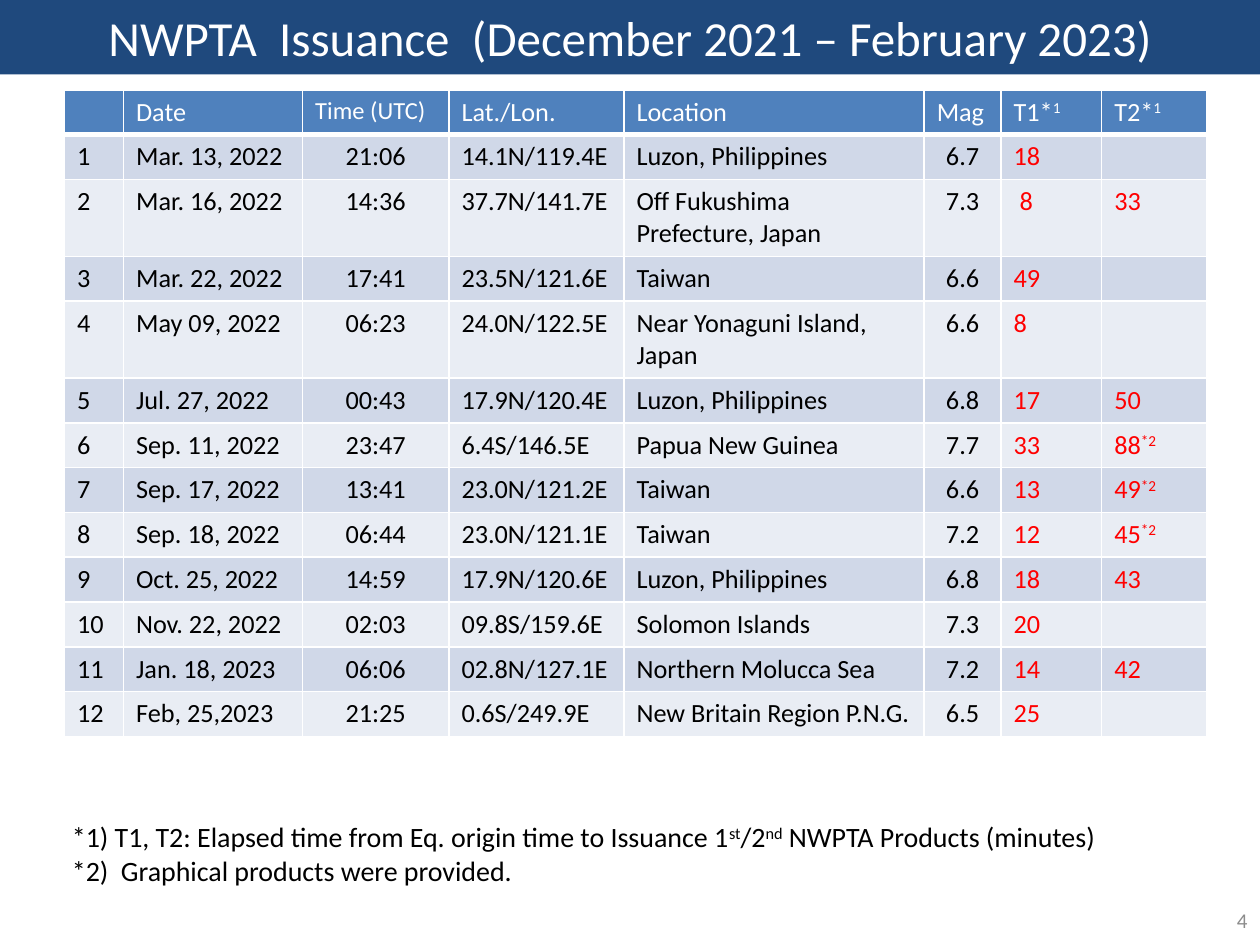
from lxml.etree import SubElement
from pptx import Presentation
from pptx.dml.color import RGBColor
from pptx.enum.shapes import MSO_SHAPE
from pptx.enum.text import MSO_ANCHOR, PP_ALIGN
from pptx.oxml.ns import qn
from pptx.util import Cm, Pt

NAVY = RGBColor(0x1F, 0x49, 0x7D)
BLUE = RGBColor(0x4F, 0x81, 0xBD)
BAND_DARK = RGBColor(0xD0, 0xD8, 0xE8)
BAND_LIGHT = RGBColor(0xE9, 0xED, 0xF4)
WHITE = RGBColor(0xFF, 0xFF, 0xFF)
BLACK = RGBColor(0, 0, 0)
RED = RGBColor(0xFF, 0, 0)
GREY = RGBColor(0x8C, 0x8C, 0x8C)

HEADER = ["", "Date", "Time (UTC)", "Lat./Lon.", "Location", "Mag", "T1*^1^", "T2*^1^"]
EVENTS = [
    ["Mar. 13, 2022", "21:06", "14.1N/119.4E", "Luzon, Philippines", "6.7", "18", ""],
    ["Mar. 16, 2022", "14:36", "37.7N/141.7E", "Off Fukushima Prefecture, Japan", "7.3", " 8", "33"],
    ["Mar. 22, 2022", "17:41", "23.5N/121.6E", "Taiwan", "6.6", "49", ""],
    ["May 09, 2022", "06:23", "24.0N/122.5E", "Near Yonaguni Island, Japan", "6.6", "8", ""],
    ["Jul. 27, 2022", "00:43", "17.9N/120.4E", "Luzon, Philippines", "6.8", "17", "50"],
    ["Sep. 11, 2022", "23:47", "6.4S/146.5E", "Papua New Guinea", "7.7", "33", "88^*2^"],
    ["Sep. 17, 2022", "13:41", "23.0N/121.2E", "Taiwan", "6.6", "13", "49^*2^"],
    ["Sep. 18, 2022", "06:44", "23.0N/121.1E", "Taiwan", "7.2", "12", "45^*2^"],
    ["Oct. 25, 2022", "14:59", "17.9N/120.6E", "Luzon, Philippines", "6.8", "18", "43"],
    ["Nov. 22, 2022", "02:03", "09.8S/159.6E", "Solomon Islands", "7.3", "20", ""],
    ["Jan. 18, 2023", "06:06", "02.8N/127.1E", "Northern Molucca Sea", "7.2", "14", "42"],
    ["Feb, 25,2023", "21:25", "0.6S/249.9E", "New Britain Region P.N.G.", "6.5", "25", ""],
]
WIDTHS = [1.19, 3.61, 2.95, 3.53, 6.05, 1.55, 2.03, 2.11]
ROW_HEIGHT, TALL_ROW_HEIGHT = 0.9, 1.55
TALL_ROWS = (2, 4)
CENTRED_COLUMNS = (2, 5)


def write(para, text, size, color, align=PP_ALIGN.LEFT):
    """Fill a paragraph; text between carets is raised."""
    para.alignment = align
    look = {"name": "Calibri", "size": Pt(size), "bold": False}
    for index, piece in enumerate(text.split("^")):
        if not piece:
            continue
        span = para.add_run()
        span.text = piece
        for name, value in look.items():
            setattr(span.font, name, value)
        span.font.color.rgb = color
        if index % 2:
            span.font._element.set("baseline", "30000")
    if not text:
        SubElement(para._p, qn("a:endParaRPr"), sz=str(size * 100))


def add_borders(cell, bottom):
    """Draw white lines on all four sides of a cell."""
    properties = cell._tc.get_or_add_tcPr()
    for side, points in {"L": 1, "R": 1, "T": 1, "B": bottom}.items():
        line = SubElement(properties, qn(f"a:ln{side}"), w=str(Pt(points)))
        SubElement(SubElement(line, qn("a:solidFill")), qn("a:srgbClr"), val=str(WHITE))


deck = Presentation()
deck.slide_width, deck.slide_height = Cm(25.4), Cm(19.05)
page = deck.slides.add_slide(deck.slide_layouts[6])

# Event table
rows = [HEADER] + [[str(number)] + event for number, event in enumerate(EVENTS, 1)]
heights = [TALL_ROW_HEIGHT if r in TALL_ROWS else ROW_HEIGHT for r in range(len(rows))]
table = page.shapes.add_table(len(rows), len(WIDTHS), Cm(1.3), Cm(1.81),
                              Cm(sum(WIDTHS)), Cm(sum(heights))).table
for column, width in zip(table.columns, WIDTHS):
    column.width = Cm(width)
for r, values in enumerate(rows):
    table.rows[r].height = Cm(heights[r])
    for c, text in enumerate(values):
        cell = table.cell(r, c)
        add_borders(cell, 3 if r == 0 else 1)
        cell.fill.solid()
        para = cell.text_frame.paragraphs[0]
        if r == 0:
            cell.fill.fore_color.rgb = BLUE
            write(para, text, 14 if c == 2 else 15, WHITE)
        else:
            cell.fill.fore_color.rgb = BAND_DARK if r % 2 else BAND_LIGHT
            align = PP_ALIGN.CENTER if c in CENTRED_COLUMNS else PP_ALIGN.LEFT
            write(para, text, 15, RED if c >= 6 else BLACK, align)

# Page number
box = page.shapes.add_textbox(Cm(19.48), Cm(18.03), Cm(5.92), Cm(1.02))
box.text_frame.word_wrap = True
box.text_frame.vertical_anchor = MSO_ANCHOR.MIDDLE
write(box.text_frame.paragraphs[0], "4", 12, GREY, PP_ALIGN.RIGHT)

# Title bar
bar = page.shapes.add_shape(MSO_SHAPE.RECTANGLE, 0, 0, deck.slide_width, Cm(1.5))
bar.shadow.inherit = False
bar.fill.solid()
bar.fill.fore_color.rgb = NAVY
bar.line.fill.background()
bar.text_frame.vertical_anchor = MSO_ANCHOR.MIDDLE
write(bar.text_frame.paragraphs[0], "NWPTA  Issuance  (December 2021 – February 2023)",
      28, WHITE, PP_ALIGN.CENTER)

# Footnotes
box = page.shapes.add_textbox(Cm(1.2), Cm(16.4), Cm(24.2), Cm(1.63))
box.text_frame.word_wrap = True
write(box.text_frame.paragraphs[0],
      "*1) T1, T2: Elapsed time from Eq. origin time to Issuance 1^st^/2^nd^ NWPTA Products (minutes)",
      16, BLACK)
write(box.text_frame.add_paragraph(), "*2)  Graphical products were provided.", 16, BLACK)

deck.save("out.pptx")
